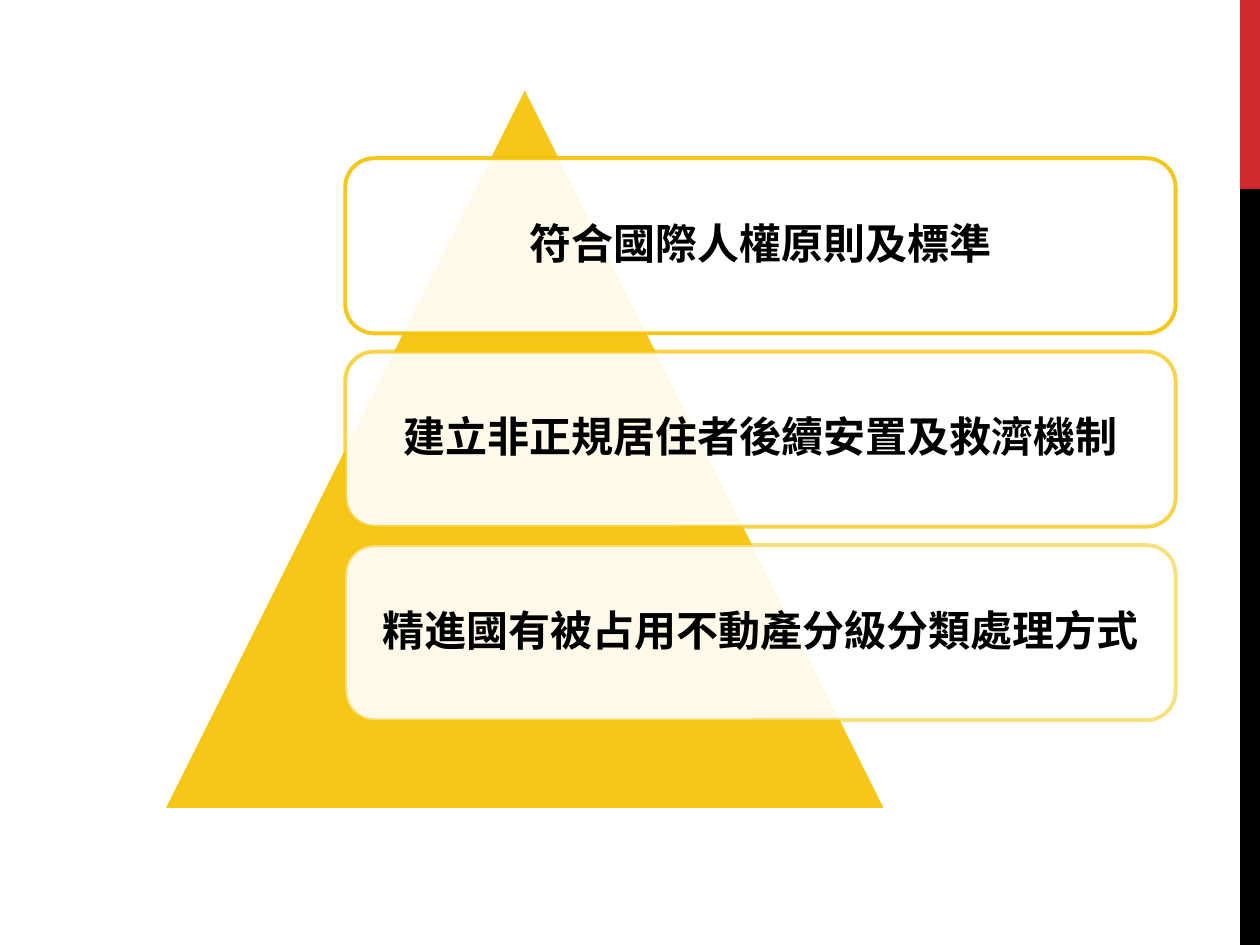
from dataclasses import dataclass

from lxml import etree
from pptx import Presentation
from pptx.dml.color import RGBColor
from pptx.enum.shapes import MSO_SHAPE
from pptx.enum.text import MSO_ANCHOR, PP_ALIGN
from pptx.oxml.ns import qn
from pptx.util import Cm, Pt

RECTANGLE = MSO_SHAPE.RECTANGLE
TRIANGLE = MSO_SHAPE.ISOSCELES_TRIANGLE
ROUNDED = MSO_SHAPE.ROUNDED_RECTANGLE
MIDDLE = MSO_ANCHOR.MIDDLE
CENTER = PP_ALIGN.CENTER


@dataclass(frozen=True)
class Theme:
    """Colours, type and line sizes of the slide."""

    red: RGBColor = RGBColor(0xD1, 0x28, 0x2E)
    black: RGBColor = RGBColor(0, 0, 0)
    white: RGBColor = RGBColor(0xFF, 0xFF, 0xFF)
    gold: RGBColor = RGBColor(0xF5, 0xC2, 0x01)
    latin_font: str = "Arial"
    chinese_font: str = "Noto Sans CJK SC"
    text_size: Pt = Pt(24)
    space_after: Pt = Pt(8.4)
    line_width: Pt = Pt(2.25)


THEME = Theme()

GOALS = (
    ("符合國際人權原則及標準", THEME.latin_font, 90),
    ("建立非正規居住者後續安置及救濟機制", THEME.chinese_font, 70),
    ("精進國有被占用不動產分級分類處理方式", THEME.latin_font, 50),
)


def set_opacity(fill, percent):
    """Give a solid fill, already coloured, an opacity in percent."""
    color = fill._xPr.find(qn("a:solidFill"))[0]
    etree.SubElement(color, qn("a:alpha")).set("val", str(percent * 1000))


def add_filled_shape(slide, kind, box, color, opacity=100, line=None, line_opacity=100):
    """Add a preset shape with a plain fill and an optional outline."""
    shape = slide.shapes.add_shape(kind, *box)
    shape.shadow.inherit = False
    shape.fill.solid()
    shape.fill.fore_color.rgb = color
    if opacity < 100:
        set_opacity(shape.fill, opacity)
    if line is None:
        shape.line.fill.background()
    else:
        shape.line.width = THEME.line_width
        shape.line.color.rgb = line
        if line_opacity < 100:
            set_opacity(shape.line.fill, line_opacity)
    return shape


def add_side_band(slide, left, top, width, height):
    """Draw the edge band: the top fifth red, the rest black."""
    red_height = height // 5
    add_filled_shape(slide, RECTANGLE, (left, top, width, red_height), THEME.red)
    black_box = (left, top + red_height, width, height - red_height)
    add_filled_shape(slide, RECTANGLE, black_box, THEME.black)


def add_goal(slide, box, text, font_name, line_opacity):
    """Draw one rounded card with its centred goal."""
    card = add_filled_shape(slide, ROUNDED, box, THEME.white, 90, THEME.gold, line_opacity)
    frame = card.text_frame
    frame.word_wrap = True
    frame.vertical_anchor = MIDDLE
    frame.margin_left = frame.margin_right = Cm(0.25)
    frame.margin_top = frame.margin_bottom = Cm(0.25)
    paragraph = frame.paragraphs[0]
    paragraph.text = text
    paragraph.alignment = CENTER
    paragraph.line_spacing = 0.9
    paragraph.space_after = THEME.space_after
    paragraph.font.name = font_name
    paragraph.font.size = THEME.text_size
    paragraph.font.bold = True
    paragraph.font.color.rgb = THEME.black


def add_pyramid(slide, left, top, size, goals):
    """Draw a triangle of the given size with a stack of goal cards over it."""
    add_filled_shape(slide, TRIANGLE, (left, top, size, size), THEME.gold, 90, THEME.white)
    card_left = left + Cm(3.68)
    card_top = top + size // 10
    card_width = Cm(16.74)
    card_height = Cm(3.53)
    pitch = Cm(3.9)
    for index, goal in enumerate(goals):
        box = (card_left, card_top + index * pitch, card_width, card_height)
        add_goal(slide, box, *goal)


def main():
    """Build and save the slide."""
    presentation = Presentation()
    presentation.slide_width = Cm(25.4)
    presentation.slide_height = Cm(19.05)
    slide = presentation.slides.add_slide(presentation.slide_layouts[6])
    add_side_band(slide, Cm(25), Cm(0), Cm(0.4), presentation.slide_height)
    add_pyramid(slide, Cm(3.28), Cm(1.73), Cm(14.6), GOALS)
    presentation.save("out.pptx")


if __name__ == "__main__":
    main()
